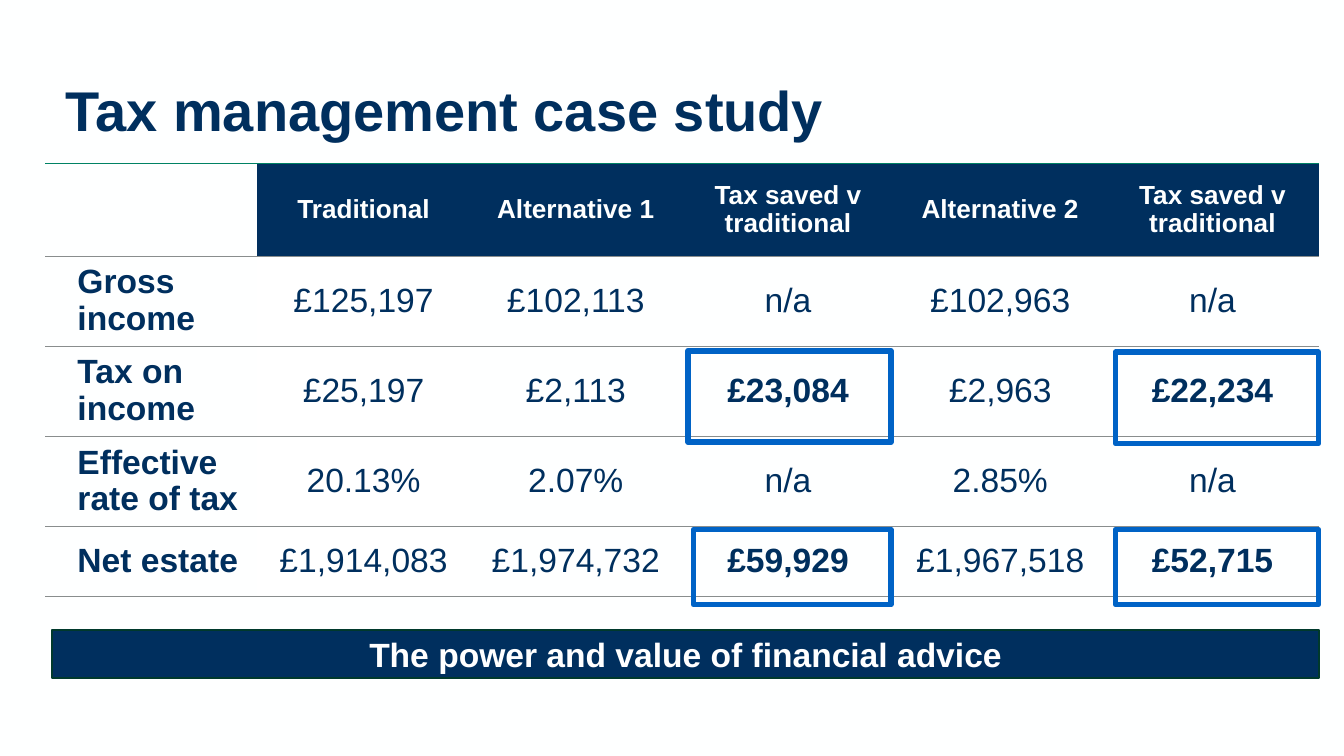
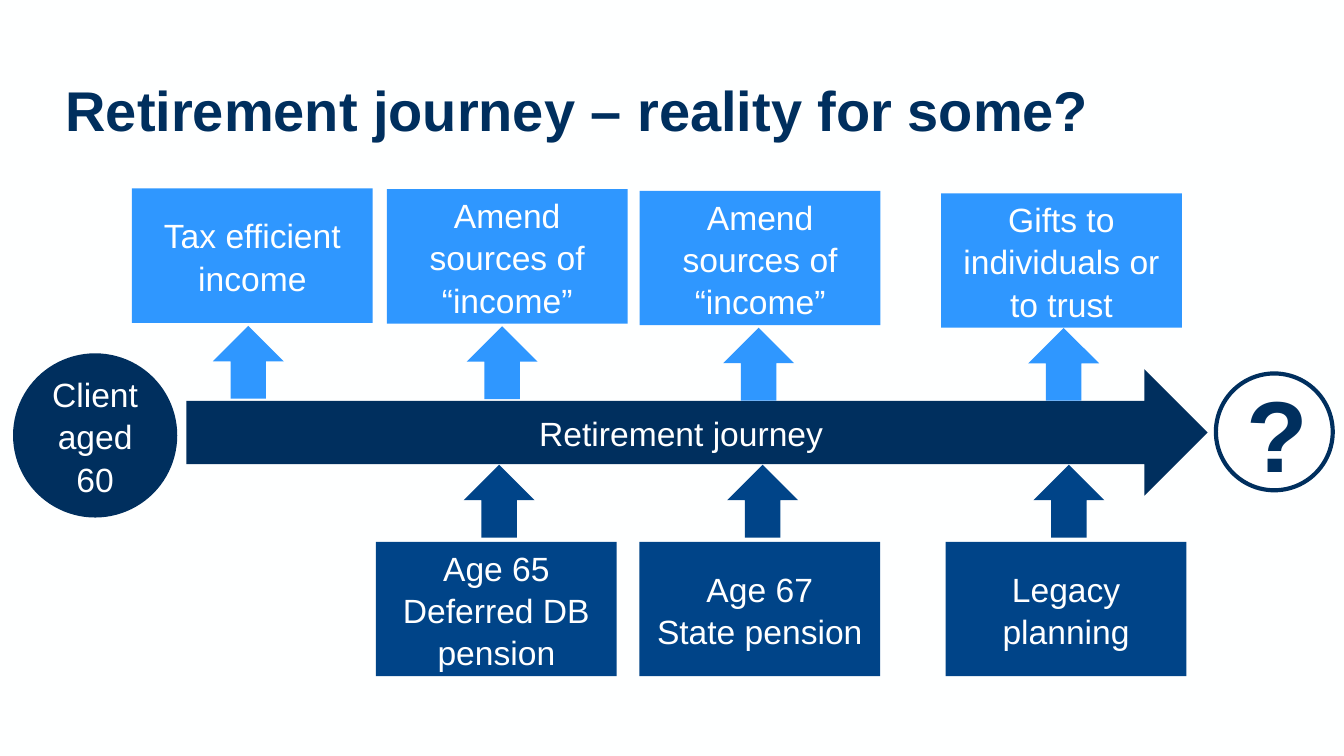
from lxml import etree
from pptx import Presentation
from pptx.dml.color import RGBColor
from pptx.enum import shapes, text
from pptx.oxml import ns
from pptx.util import Pt

NAVY = RGBColor(0x00, 0x2F, 0x5E)
DEEP = RGBColor(0x00, 0x44, 0x88)
SKY = RGBColor(0x2F, 0x97, 0xFF)
ACCENT = RGBColor(0x00, 0x63, 0xC6)
BANNER_EDGE = RGBColor(0x00, 0x39, 0x2C)
HEADER_EDGE = RGBColor(0x00, 0x82, 0x64)
GREY = RGBColor(0x89, 0x8D, 0x8D)
WHITE = RGBColor(0xFF, 0xFF, 0xFF)
PAPER = RGBColor(0xFE, 0xFF, 0xFF)
FONT = "Arial"
PLAIN_TABLE = "{2D5ABB26-0587-4C30-8999-92F81FD0307C}"
SHAPE = shapes.MSO_SHAPE

CASE_TITLE = "Tax management case study"
CASE_ROWS = [
    ["", "Traditional", "Alternative 1", "Tax saved v traditional",
     "Alternative 2", "Tax saved v traditional"],
    ["Gross income", "£125,197", "£102,113", "n/a", "£102,963", "n/a"],
    ["Tax on income", "£25,197", "£2,113", "£23,084", "£2,963", "£22,234"],
    ["Effective rate of tax", "20.13%", "2.07%", "n/a", "2.85%", "n/a"],
    ["Net estate", "£1,914,083", "£1,974,732", "£59,929", "£1,967,518", "£52,715"],
]
ROW_HEIGHTS = [49.7, 37.4, 37.4, 40.3, 37.4]
COLUMN_WIDTH = 113.7
SAVING_COLUMNS = (3, 5)
SAVING_FRAMES = [
    (368.6, 187.9, 108.7, 49),
    (371.5, 283.7, 105.8, 40.3),
    (597.6, 188.6, 108.7, 49),
    (597.6, 283.7, 108.7, 40.3),
]
BANNER = "The power and value of financial advice"

JOURNEY_TITLE = "Retirement journey – reality for some?"
# text, box left, box top, arrow left, arrow top
ACTIONS = [
    ("Tax efficient income", 70.7, 101, 114, 174.6),
    ("Amend sources of “income”", 207.2, 101.4, 250, 174.8),
    ("Amend sources of “income”", 342.7, 102.3, 387.4, 175.6),
    ("Gifts to individuals or to trust", 504.1, 103.6, 550.8, 175.7),
]
# text, box left
MILESTONES = [
    ("Age 65 Deferred DB pension", 201.4),
    ("Age 67\nState pension", 342.5),
    ("Legacy planning", 506.6),
]
MILESTONE_TOP, MILESTONE_ARROW_TOP, MILESTONE_ARROW_SHIFT = 290.3, 249, 47
STEP_WIDTH, STEP_HEIGHT = 129, 72
ARROW_WIDTH, ARROW_HEIGHT = 38, 39


def write(frame, words, size, color, bold=False, align=text.PP_ALIGN.CENTER, spacing=None):
    """Fill a text frame; a newline in words becomes a line break."""
    frame.word_wrap = True
    para = frame.paragraphs[0]
    para.alignment = align
    para.line_spacing = spacing
    for number, line in enumerate(words.split("\n")):
        if number:
            para.add_line_break()
        span = para.add_run()
        span.text = line
        span.font.name = FONT
        span.font.size = Pt(size)
        span.font.bold = bold
        span.font.color.rgb = color


def add_page(deck, title):
    page = deck.slides.add_slide(deck.slide_layouts[6])
    page.background.fill.solid()
    page.background.fill.fore_color.rgb = PAPER
    box = page.shapes.add_textbox(Pt(28), Pt(21.6), Pt(670), Pt(78.5))
    box.text_frame.vertical_anchor = text.MSO_ANCHOR.MIDDLE
    write(box.text_frame, title, 30, NAVY, True, text.PP_ALIGN.LEFT, Pt(31))
    return page


def add_block(page, kind, place, fill=None, line=None, width=1):
    block = page.shapes.add_shape(kind, *map(Pt, place))
    block.shadow.inherit = False
    if fill is None:
        block.fill.background()
    else:
        block.fill.solid()
        block.fill.fore_color.rgb = fill
    if line is None:
        block.line.fill.background()
    else:
        block.line.color.rgb = line
        block.line.width = Pt(width)
    block.text_frame.vertical_anchor = text.MSO_ANCHOR.MIDDLE
    return block


def add_border(cell, side, color, width):
    properties = cell._tc.get_or_add_tcPr()
    edge = etree.SubElement(properties, ns.qn("a:" + side), w=str(Pt(width)))
    fill = etree.SubElement(edge, ns.qn("a:solidFill"))
    etree.SubElement(fill, ns.qn("a:srgbClr"), val=str(color))


def style_cell(cell, words, row, column):
    header, label = row == 0, column == 0
    if header:
        add_border(cell, "lnT", HEADER_EDGE, 1)
    else:
        add_border(cell, "lnT", GREY, 0.25)
    add_border(cell, "lnB", GREY, 0.25)

    if (header and not label) or column == 1:
        cell.fill.solid()
        cell.fill.fore_color.rgb = NAVY if header else WHITE
    else:
        cell.fill.background()

    cell.vertical_anchor = text.MSO_ANCHOR.MIDDLE
    cell.margin_left = Pt(17.3 if label else 6.5)
    cell.margin_right = Pt(6.5)
    cell.margin_top = cell.margin_bottom = Pt(3.2)
    if words:
        saving = column in SAVING_COLUMNS and words != "n/a"
        write(cell.text_frame, words, 14 if header else 18,
              PAPER if header else NAVY, header or label or saving,
              text.PP_ALIGN.LEFT if label else text.PP_ALIGN.CENTER, 0.97)


def add_case_table(page):
    columns = len(CASE_ROWS[0])
    table = page.shapes.add_table(
        len(CASE_ROWS), columns, Pt(24.2), Pt(87.5),
        Pt(COLUMN_WIDTH * columns), Pt(sum(ROW_HEIGHTS))).table
    table.first_row = table.horz_banding = False
    table._tbl.tblPr.find(ns.qn("a:tableStyleId")).text = PLAIN_TABLE
    for column in table.columns:
        column.width = Pt(COLUMN_WIDTH)
    for row, (height, entries) in enumerate(zip(ROW_HEIGHTS, CASE_ROWS)):
        table.rows[row].height = Pt(height)
        for column, words in enumerate(entries):
            style_cell(table.cell(row, column), words, row, column)


def build_case_study(deck):
    page = add_page(deck, CASE_TITLE)
    add_case_table(page)
    for place in SAVING_FRAMES:
        add_block(page, SHAPE.RECTANGLE, place, line=ACCENT, width=3)
    banner = add_block(page, SHAPE.RECTANGLE, (28.1, 337.4, 678.6, 25.8), NAVY, BANNER_EDGE)
    write(banner.text_frame, BANNER, 18, WHITE, True)


def add_step(page, words, color, left, top, arrow_left, arrow_top):
    """Add a labelled box and the up arrow that ties it to the journey."""
    box = add_block(page, SHAPE.RECTANGLE, (left, top, STEP_WIDTH, STEP_HEIGHT), color)
    write(box.text_frame, words, 18, WHITE, spacing=1.05)
    add_block(page, SHAPE.UP_ARROW, (arrow_left, arrow_top, ARROW_WIDTH, ARROW_HEIGHT), color)


def build_journey(deck):
    page = add_page(deck, JOURNEY_TITLE)
    journey = add_block(page, SHAPE.RIGHT_ARROW, (99.8, 197.8, 547.2, 67.8), NAVY)
    write(journey.text_frame, "Retirement journey", 18, WHITE, spacing=1.05)
    for words, *places in ACTIONS:
        add_step(page, words, SKY, *places)
    for words, left in MILESTONES:
        add_step(page, words, DEEP, left, MILESTONE_TOP,
                 left + MILESTONE_ARROW_SHIFT, MILESTONE_ARROW_TOP)
    client = add_block(page, SHAPE.OVAL, (7, 189.3, 88, 88), NAVY)
    write(client.text_frame, "Client aged 60", 18, WHITE, spacing=1.05)
    outcome = add_block(page, SHAPE.OVAL, (651.4, 200.1, 62.6, 62.6), WHITE, NAVY, 2.25)
    write(outcome.text_frame, "?", 54, NAVY, True)


def main():
    deck = Presentation()
    deck.slide_width, deck.slide_height = Pt(720), Pt(405)
    build_case_study(deck)
    build_journey(deck)
    deck.save("out.pptx")


if __name__ == "__main__":
    main()
